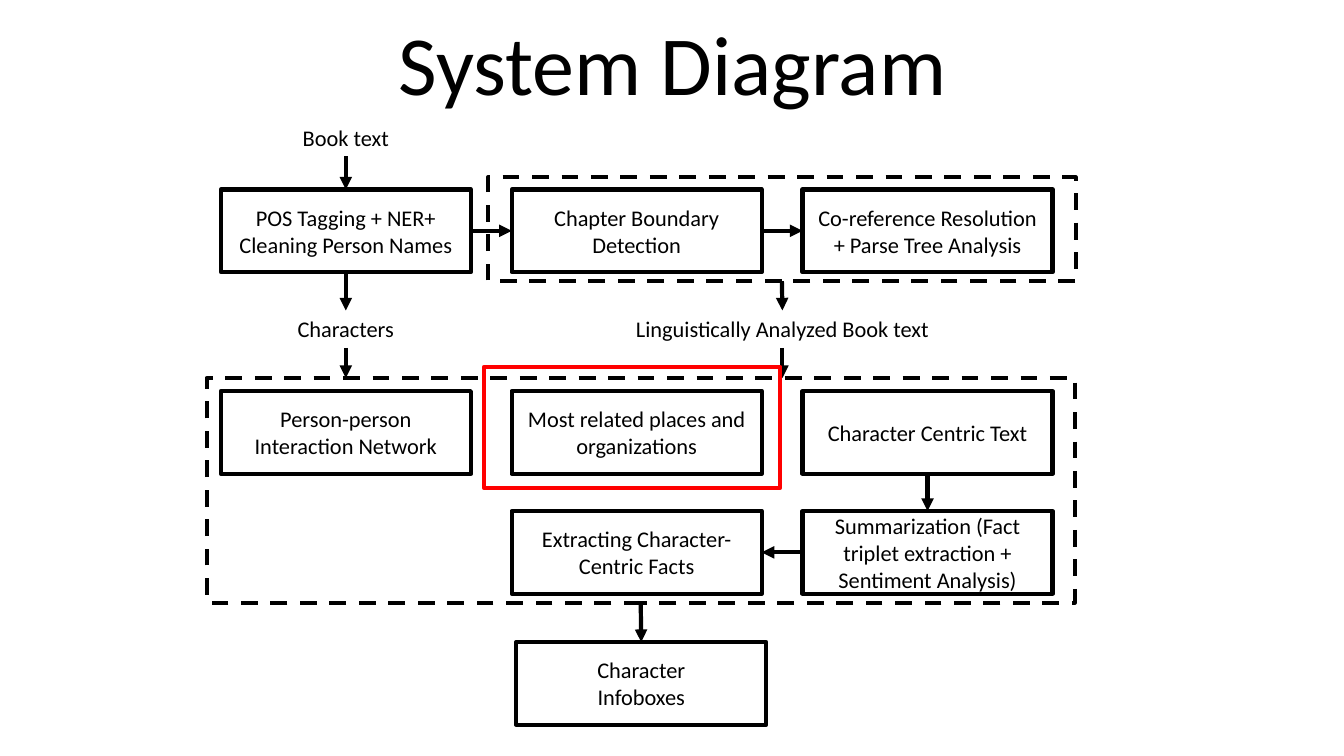
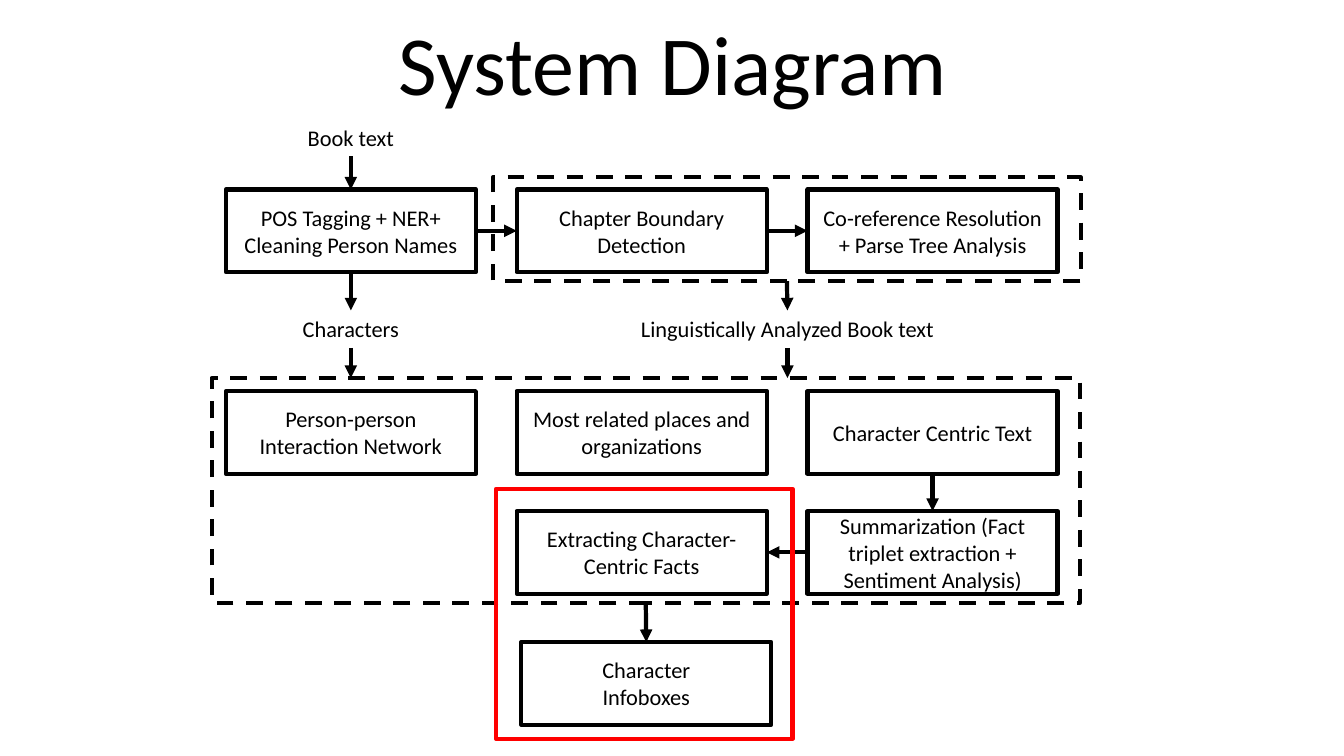
"""Build two slides that walk through a system diagram."""
import dataclasses

import lxml.etree
import pptx
import pptx.dml.color
import pptx.enum.dml
import pptx.enum.shapes
import pptx.enum.text
import pptx.oxml.ns
import pptx.util

Inches = pptx.util.Inches
Anchor = pptx.enum.text.MSO_ANCHOR
AutoSize = pptx.enum.text.MSO_AUTO_SIZE
RGBColor = pptx.dml.color.RGBColor
TOP, LEFT, BOTTOM, RIGHT = range(4)


@dataclasses.dataclass(frozen=True)
class Theme:
    """Colours, type sizes and line width of the deck."""
    ink: RGBColor = RGBColor(0x00, 0x00, 0x00)
    highlight: RGBColor = RGBColor(0xFF, 0x00, 0x00)
    font: str = "Calibri"
    title_size: int = 60
    body_size: int = 16
    line_width: int = 3


THEME = Theme()
COLUMNS = [2.19 + 2.885 * column for column in range(3)]
ROWS = [1.88, 3.88, 5.07, 6.37]
BOX_SIZE = (2.48, 0.82)
LABEL_HEIGHT = 0.37


def write(frame, text, size=THEME.body_size, anchor=Anchor.MIDDLE,
          wrap=True, auto_size=AutoSize.NONE, spacing=None):
    """Fill a text frame with centred text, one paragraph per line."""
    frame.word_wrap = wrap
    frame.auto_size = auto_size
    frame.vertical_anchor = anchor
    frame.text = text
    for paragraph in frame.paragraphs:
        paragraph.alignment = pptx.enum.text.PP_ALIGN.CENTER
        paragraph.line_spacing = spacing
        paragraph.font.name = THEME.font
        paragraph.font.size = pptx.util.Pt(size)
        paragraph.font.color.rgb = THEME.ink


def add_title(slide, text):
    """Place and format the slide title."""
    title = slide.shapes.title
    title.left, title.top = Inches(0.92), Inches(-0.27)
    title.width, title.height = Inches(11.5), Inches(1.45)
    write(title.text_frame, text, size=THEME.title_size,
          anchor=Anchor.BOTTOM, spacing=0.9)


def style_line(line, color=THEME.ink):
    """Apply the shared line width and a colour."""
    line.color.rgb = color
    line.width = pptx.util.Pt(THEME.line_width)


def add_outline(shapes, left, top, width, height, color=THEME.ink, dashed=False):
    """Draw an unfilled rectangle."""
    outline = shapes.add_shape(
        pptx.enum.shapes.MSO_SHAPE.RECTANGLE,
        Inches(left), Inches(top), Inches(width), Inches(height))
    outline.shadow.inherit = False
    outline.fill.background()
    style_line(outline.line, color)
    if dashed:
        outline.line.dash_style = pptx.enum.dml.MSO_LINE.DASH
    return outline


def add_step(shapes, text, left, row):
    """Draw a process step on a row of the diagram."""
    step = add_outline(shapes, left, ROWS[row], *BOX_SIZE)
    write(step.text_frame, text)
    return step


def add_label(shapes, text, center, top, width):
    """Place a one-line data label around a centre."""
    label = shapes.add_textbox(Inches(center - width / 2), Inches(top),
                               Inches(width), Inches(LABEL_HEIGHT))
    write(label.text_frame, text, anchor=Anchor.TOP, wrap=False,
          auto_size=AutoSize.SHAPE_TO_FIT_TEXT)
    return label


def site_point(shape, site):
    """Return the position of a connection site."""
    middle = shape.left + shape.width // 2
    center = shape.top + shape.height // 2
    return {TOP: (middle, shape.top),
            LEFT: (shape.left, center),
            BOTTOM: (middle, shape.top + shape.height),
            RIGHT: (shape.left + shape.width, center)}[site]


def add_arrow(shapes, source, source_site, target, target_site=None):
    """Join two shapes, or drop straight to the target's top edge."""
    start = site_point(source, source_site)
    end = ((start[0], target.top) if target_site is None
           else site_point(target, target_site))
    arrow = shapes.add_connector(
        pptx.enum.shapes.MSO_CONNECTOR.STRAIGHT, *start, *end)
    style_line(arrow.line)
    qn = pptx.oxml.ns.qn
    properties = arrow.element.spPr
    lxml.etree.SubElement(properties.find(qn("a:ln")), qn("a:tailEnd"),
                          type="triangle")
    lxml.etree.SubElement(properties, qn("a:effectLst"))
    arrow.begin_connect(source, source_site)
    if target_site is not None:
        arrow.end_connect(target, target_site)


def add_diagram(slide, shift):
    """Draw the grouped diagram and move it sideways."""
    diagram = slide.shapes.add_group_shape()
    shapes = diagram.shapes
    first, second, third = COLUMNS
    tagging = add_step(shapes, "POS Tagging + NER+ Cleaning Person Names", first, 0)
    chapters = add_step(shapes, "Chapter Boundary Detection", second, 0)
    coreference = add_step(
        shapes, "Co-reference Resolution + Parse Tree Analysis", third, 0)
    add_step(shapes, "Person-person Interaction Network", first, 1)
    add_step(shapes, "Most related places and organizations", second, 1)
    centric_text = add_step(shapes, "Character Centric Text", third, 1)
    facts = add_step(shapes, "Extracting Character-Centric Facts", second, 2)
    summary = add_step(
        shapes, "Summarization (Fact triplet extraction + Sentiment Analysis)",
        third, 2)
    infoboxes = add_step(shapes, "Character\nInfoboxes", 5.12, 3)

    analysis = add_outline(shapes, 4.84, 1.76, 5.83, 1.03, dashed=True)
    extraction = add_outline(shapes, 2.05, 3.75, 8.61, 2.23, dashed=True)

    first_center = first + BOX_SIZE[0] / 2
    book = add_label(shapes, "Book text", first_center, 1.18, 1.07)
    characters = add_label(shapes, "Characters", first_center, 3.08, 1.17)
    analyzed = add_label(
        shapes, "Linguistically Analyzed Book text", 7.76, 3.08, 3.14)

    for link in (
        (book, BOTTOM, tagging, TOP),
        (tagging, RIGHT, chapters, LEFT),
        (chapters, RIGHT, coreference, LEFT),
        (tagging, BOTTOM, characters, TOP),
        (analysis, BOTTOM, analyzed, TOP),
        (characters, BOTTOM, extraction),
        (analyzed, BOTTOM, extraction),
        (centric_text, BOTTOM, summary, TOP),
        (summary, LEFT, facts, RIGHT),
        (extraction, BOTTOM, infoboxes, TOP),
    ):
        add_arrow(shapes, *link)
    diagram.left += Inches(shift)


def main():
    """Build and save the deck."""
    deck = pptx.Presentation()
    deck.slide_width, deck.slide_height = Inches(13.33), Inches(7.5)
    title_only = deck.slide_layouts[5]
    for shift, highlight in (
        (0, (4.8, 3.64, 2.94, 1.2)),
        (0.05, (4.92, 4.85, 2.94, 2.48)),
    ):
        slide = deck.slides.add_slide(title_only)
        add_title(slide, "System Diagram")
        add_diagram(slide, shift)
        add_outline(slide.shapes, *highlight, color=THEME.highlight)
    deck.save("out.pptx")


if __name__ == "__main__":
    main()
